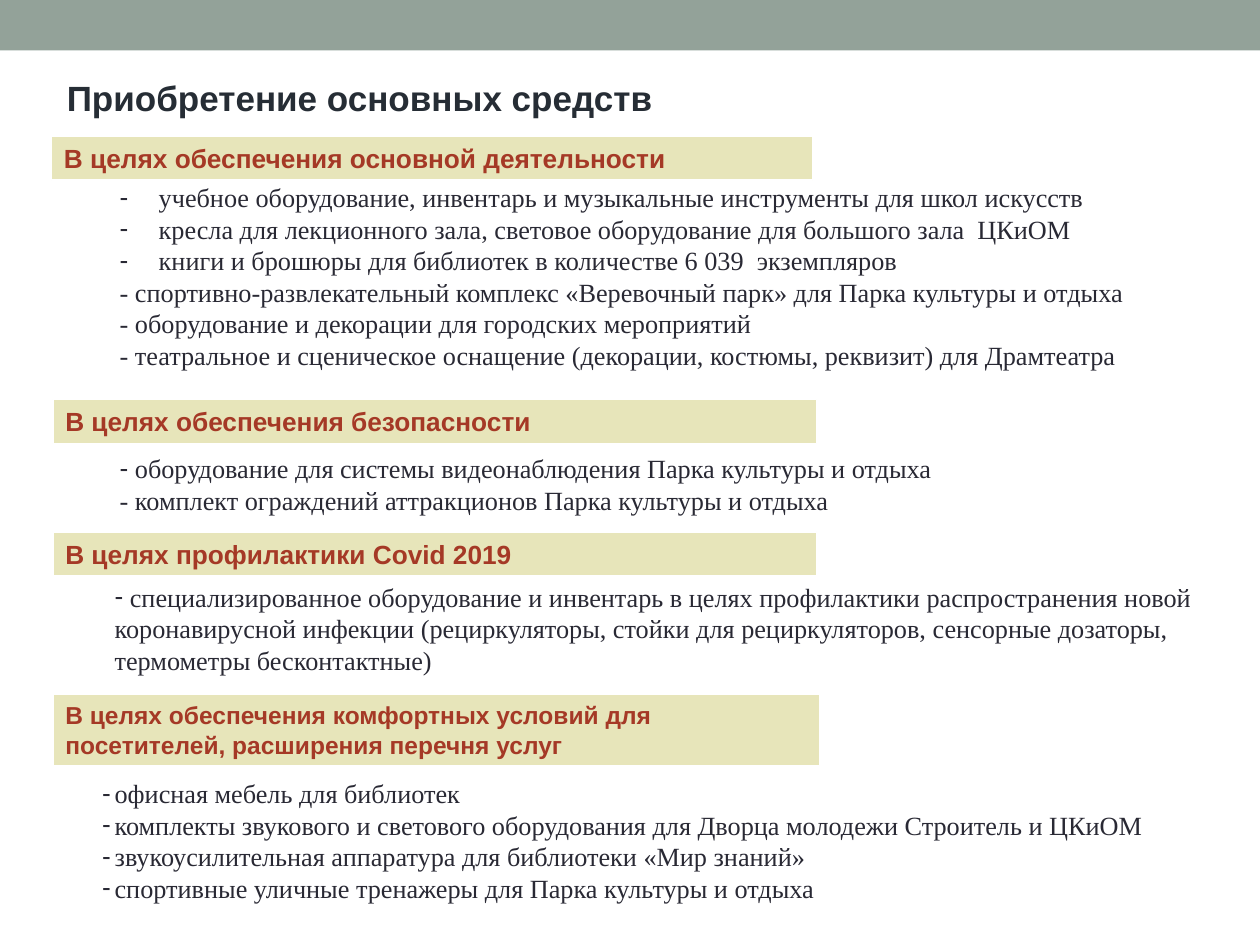
from lxml.etree import SubElement
from pptx import Presentation
from pptx.dml.color import RGBColor
from pptx.enum.shapes import MSO_SHAPE
from pptx.enum.text import MSO_ANCHOR, MSO_AUTO_SIZE, PP_ALIGN
from pptx.oxml.ns import qn
from pptx.util import Inches, Pt

COLORS = {
    "band": "93A299",
    "title": "262D35",
    "heading": "A53926",
    "heading_fill": "E7E5BA",
    "body": "292934",
    "white": "FFFFFF",
}

HEADINGS = [
    ("В целях обеспечения основной деятельности", (0.41, 1.08, 6.04, 0.35), 15),
    ("В целях обеспечения безопасности", (0.42, 3.17, 6.06, 0.35), 15),
    ("В целях профилактики Covid 2019", (0.42, 4.22, 6.06, 0.35), 15),
    ("В целях обеспечения комфортных условий для посетителей, расширения перечня услуг",
     (0.42, 5.51, 6.09, 0.57), 14),
]

LISTS = [
    ((0.85, 1.39, 8.82, 1.62), 0.31, [
        "учебное оборудование, инвентарь и музыкальные инструменты для школ искусств",
        "кресла для лекционного зала, световое оборудование для большого зала  ЦКиОМ",
        "книги и брошюры для библиотек в количестве 6 039  экземпляров",
    ], [
        "- спортивно-развлекательный комплекс «Веревочный парк» для Парка культуры и отдыха",
        "- оборудование и декорации для городских мероприятий",
        "- театральное и сценическое оснащение (декорации, костюмы, реквизит) для Драмтеатра",
    ]),
    ((0.85, 3.54, 8.9, 0.61), 0, [
        " оборудование для системы видеонаблюдения Парка культуры и отдыха",
    ], [
        "- комплект ограждений аттракционов Парка культуры и отдыха",
    ]),
    ((0.81, 4.56, 8.9, 0.86), 0, [
        " специализированное оборудование и инвентарь в целях профилактики распространения "
        "новой коронавирусной инфекции (рециркуляторы, стойки для рециркуляторов, "
        "сенсорные дозаторы, термометры бесконтактные)",
    ], []),
    ((0.71, 6.12, 8.9, 1.11), 0.1, [
        "офисная мебель для библиотек",
        "комплекты звукового и светового оборудования для Дворца молодежи Строитель и ЦКиОМ",
        "звукоусилительная аппаратура для библиотеки «Мир знаний»",
        "спортивные уличные тренажеры для Парка культуры и отдыха",
    ], []),
]


def rgb(name):
    """Return the named colour."""
    return RGBColor.from_string(COLORS[name])


def place(shape, box):
    """Move and size a shape, given its box in inches."""
    shape.left, shape.top, shape.width, shape.height = map(Inches, box)


def prepare_frame(frame):
    """Give a text frame the margins and wrapping shared by all text."""
    frame.word_wrap = True
    frame.auto_size = MSO_AUTO_SIZE.NONE
    frame.vertical_anchor = MSO_ANCHOR.TOP
    frame.margin_left = frame.margin_right = Inches(0.1)
    frame.margin_top = frame.margin_bottom = Inches(0.05)


def write(paragraph, text, *, size=15, font="Arial", color="body", bold=False,
          bullet=None, indent=0):
    """Write formatted text into a paragraph."""
    paragraph.alignment = PP_ALIGN.LEFT
    paragraph.line_spacing = 1.0
    paragraph.space_before = paragraph.space_after = Pt(0)
    run = paragraph.add_run()
    run.text = text
    run.font.size = Pt(size)
    run.font.name = font
    run.font.bold = bold
    run.font.color.rgb = rgb(color)
    properties = paragraph._p.get_or_add_pPr()
    properties.set("marL", str(Inches(indent)))
    properties.set("indent", str(-Inches(indent)))
    if bullet:
        SubElement(properties, qn("a:buChar")).set("char", bullet)
    else:
        SubElement(properties, qn("a:buNone"))


def add_bar(slide, box, fill, line=None):
    """Add a flat filled rectangle."""
    bar = slide.shapes.add_shape(MSO_SHAPE.RECTANGLE, *map(Inches, box))
    bar.shadow.inherit = False
    bar.fill.solid()
    bar.fill.fore_color.rgb = rgb(fill)
    if line:
        bar.line.color.rgb = rgb(line)
        bar.line.width = Pt(1)
    else:
        bar.line.fill.background()
    return bar


def add_heading(slide, text, box, size):
    """Add a section heading on a tinted bar."""
    heading = add_bar(slide, box, "heading_fill", line="white")
    prepare_frame(heading.text_frame)
    write(heading.text_frame.paragraphs[0], text, size=size, color="heading", bold=True)


def fill_title(title, text):
    """Place and write the slide title."""
    place(title, (0.43, 0.56, 9.13, 0.44))
    prepare_frame(title.text_frame)
    write(title.text_frame.paragraphs[0], text, size=20, color="title", bold=True)


def fill_list(body, box, indent, bulleted, plain):
    """Place a body placeholder and write its bulleted and plain items."""
    place(body, box)
    frame = body.text_frame
    prepare_frame(frame)
    items = [(item, "-", indent) for item in bulleted] + [(item, None, 0) for item in plain]
    for number, (item, bullet, hang) in enumerate(items):
        paragraph = frame.add_paragraph() if number else frame.paragraphs[0]
        write(paragraph, item, font="Times New Roman", bullet=bullet, indent=hang)


def main():
    """Build the slide on fixed asset purchases."""
    deck = Presentation()
    deck.slide_width, deck.slide_height = Inches(10), Inches(7.5)
    comparison_layout = deck.slide_layouts[4]
    slide = deck.slides.add_slide(comparison_layout)
    add_bar(slide, (0, 0, 10, 0.4), "band")
    title, *bodies = slide.placeholders
    fill_title(title, "Приобретение основных средств")
    for heading in HEADINGS:
        add_heading(slide, *heading)
    for body, purchases in zip(bodies, LISTS):
        fill_list(body, *purchases)
    deck.save("out.pptx")


if __name__ == "__main__":
    main()
